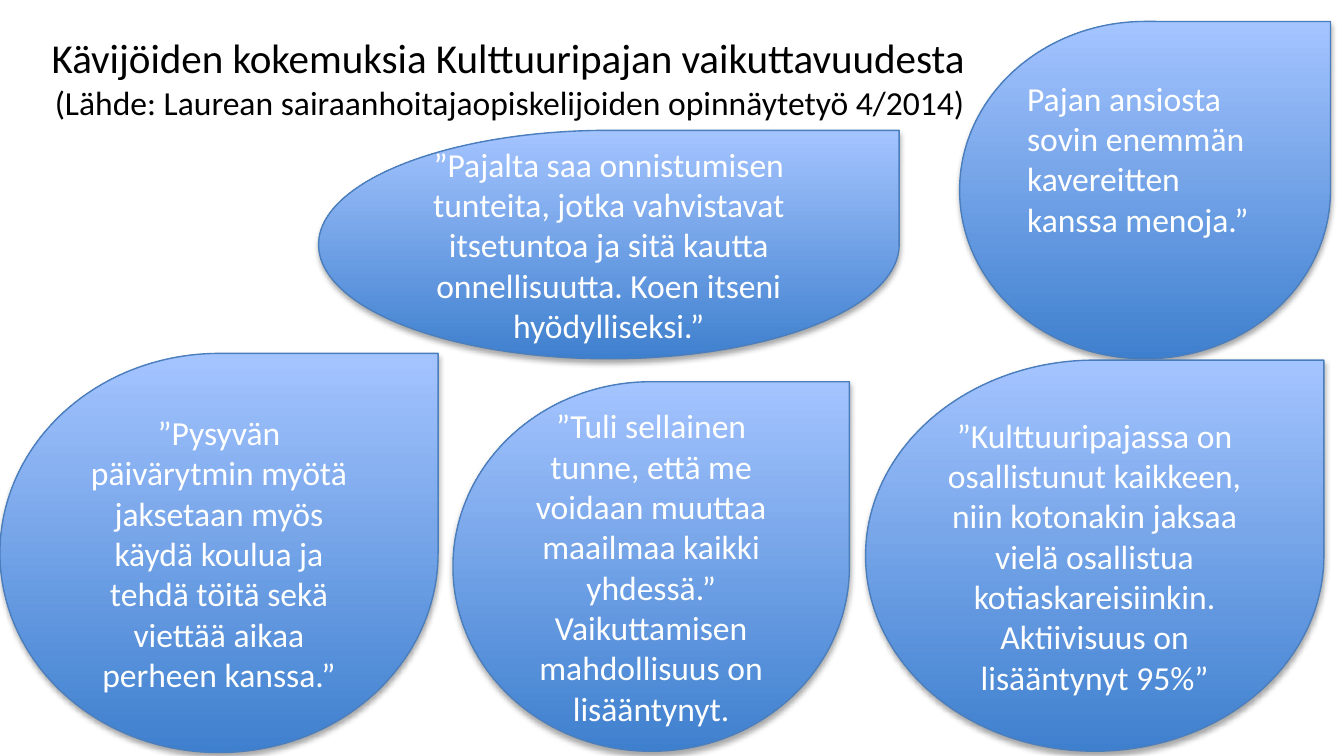
"""Build a slide of visitor quotes in teardrop shapes under a two-line title."""
from lxml import etree
from pptx import Presentation
from pptx import util as u
from pptx.dml.color import RGBColor
from pptx.enum import shapes, text
from pptx.oxml import ns


def color(value):
    return RGBColor.from_string(value)


def add_soft_shadow(shape):
    shape.shadow.inherit = False
    effects = shape._element.spPr.find(ns.qn("a:effectLst"))
    shadow = etree.SubElement(effects, ns.qn("a:outerShdw"), blurRad=str(u.Pt(3.1)),
                              dist=str(u.Pt(1.8)), dir="5400000", rotWithShape="0")
    black = etree.SubElement(shadow, ns.qn("a:srgbClr"), val="000000")
    etree.SubElement(black, ns.qn("a:alpha"), val="35000")


presentation = Presentation()
presentation.slide_width = u.Inches(10)
presentation.slide_height = u.Inches(5.625)
slide = presentation.slides.add_slide(presentation.slide_layouts[5])

title = slide.shapes.title
title.left, title.top = u.Inches(-0.46), u.Inches(0.16)
title.width, title.height = u.Inches(7.74), u.Inches(0.81)
frame = title.text_frame
frame.text = ("Kävijöiden kokemuksia Kulttuuripajan vaikuttavuudesta\n"
              "(Lähde: Laurean sairaanhoitajaopiskelijoiden opinnäytetyö 4/2014)")
frame.auto_size = text.MSO_AUTO_SIZE.NONE
frame.vertical_anchor = text.MSO_ANCHOR.TOP
frame.margin_top = u.Inches(0.08)
for paragraph, size in zip(frame.paragraphs, (22, 18)):
    paragraph.alignment = text.PP_ALIGN.RIGHT
    font = paragraph.runs[0].font
    font.name, font.size = "Calibri", u.Pt(size)
    font.color.rgb = color("000000")

centered = (text.PP_ALIGN.CENTER, text.MSO_ANCHOR.MIDDLE)
top_left = (text.PP_ALIGN.LEFT, text.MSO_ANCHOR.TOP)
quotes = [
    (7.14, 0.16, 2.76, 2.51, top_left,
     "Pajan ansiosta sovin enemmän kavereitten kanssa menoja.”"),
    (6.44, 2.68, 3.41, 2.91, centered,
     "”Kulttuuripajassa on osallistunut kaikkeen, niin kotonakin jaksaa vielä "
     "osallistua kotiaskareisiinkin. Aktiivisuus on lisääntynyt 95%”"),
    (3.37, 2.84, 2.95, 2.75, centered,
     "”Tuli sellainen tunne, että me voidaan muuttaa maailmaa kaikki yhdessä.” "
     "Vaikuttamisen mahdollisuus on lisääntynyt."),
    (0, 2.63, 3.26, 2.97, centered,
     "”Pysyvän päivärytmin myötä jaksetaan myös käydä koulua ja tehdä töitä sekä "
     "viettää aikaa perheen kanssa.”"),
    (2.37, 0.97, 4.32, 1.7, centered,
     "”Pajalta saa onnistumisen tunteita, jotka vahvistavat itsetuntoa ja sitä kautta "
     "onnellisuutta. Koen itseni hyödylliseksi.”"),
]
for left, top, width, height, (alignment, anchor), quote in quotes:
    drop = slide.shapes.add_shape(shapes.MSO_SHAPE.TEAR, u.Inches(left), u.Inches(top),
                                  u.Inches(width), u.Inches(height))
    drop.fill.gradient()
    drop.fill.gradient_angle = 90
    for stop, shade in zip(drop.fill.gradient_stops, ("3F80CE", "A4C4FF")):
        stop.color.rgb = color(shade)
    drop.line.color.rgb = color("4B7EBC")
    drop.line.width = u.Pt(0.75)
    add_soft_shadow(drop)
    frame = drop.text_frame
    frame.text = quote
    frame.word_wrap = True
    frame.vertical_anchor = anchor
    paragraph = frame.paragraphs[0]
    paragraph.alignment = alignment
    font = paragraph.runs[0].font
    font.name, font.size = "Calibri", u.Pt(18)
    font.color.rgb = color("FFFFFF")

presentation.save("out.pptx")
